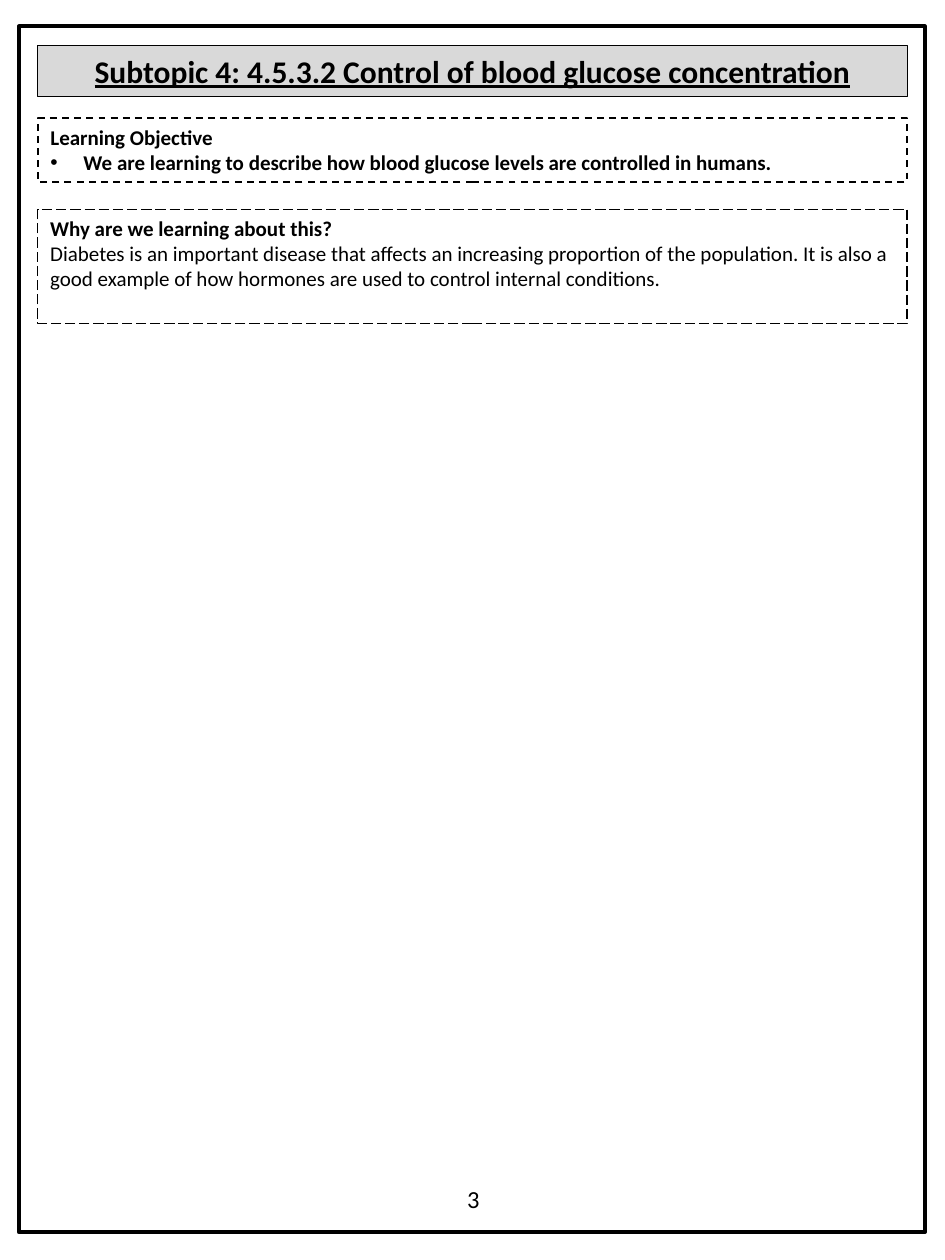
from lxml import etree
from pptx import Presentation
from pptx.dml.color import RGBColor
from pptx.enum.dml import MSO_LINE_DASH_STYLE as Dash
from pptx.enum.shapes import MSO_SHAPE as Shape
from pptx.enum.text import MSO_ANCHOR as Anchor, MSO_AUTO_SIZE as AutoSize, PP_ALIGN as Align
from pptx.oxml.ns import qn
from pptx.util import Pt

BLACK = RGBColor(0x00, 0x00, 0x00)
GREY = RGBColor(0xD9, 0xD9, 0xD9)
LEFT, WIDTH = 21.6, 496.8


def place(box, left, top, width, height, line_width=None, dash=None):
    box.left, box.top, box.width, box.height = Pt(left), Pt(top), Pt(width), Pt(height)
    box.fill.background()
    if line_width:
        box.line.color.rgb = BLACK
        box.line.width = Pt(line_width)
        box.line.dash_style = dash


def write(box, lines, size, anchor=Anchor.TOP, align=Align.LEFT):
    """Fill the box with (text, bold) paragraphs."""
    frame = box.text_frame
    frame.text = "\n".join(text for text, _ in lines)
    frame.word_wrap = True
    frame.auto_size = AutoSize.NONE
    frame.vertical_anchor = anchor
    for paragraph, (_, bold) in zip(frame.paragraphs, lines):
        paragraph.alignment = align
        paragraph.space_before = Pt(0)
        paragraph.font.name = "Calibri"
        paragraph.font.size = Pt(size)
        paragraph.font.bold = bold
        paragraph.font.color.rgb = BLACK


prs = Presentation()
prs.slide_width, prs.slide_height = Pt(540), Pt(720)
slide = prs.slides.add_slide(prs.slide_layouts[1])

title = slide.shapes.title
place(title, LEFT, 25.9, WIDTH, 29.1, 0.75)
title.fill.solid()
title.fill.fore_color.rgb = GREY
write(title, [("Subtopic 4: 4.5.3.2 Control of blood glucose concentration", True)],
      18, Anchor.TOP, Align.CENTER)
title.text_frame.paragraphs[0].font.underline = True

objective = slide.placeholders[1]
place(objective, LEFT, 67.6, WIDTH, 36.4, 1, Dash.DASH)
write(objective, [
    ("Learning Objective", True),
    ("We are learning to describe how blood glucose levels are controlled in humans.", True),
], 12)
heading, goal = [p._p.get_or_add_pPr() for p in objective.text_frame.paragraphs]
heading.set("marL", "0")
heading.set("indent", "0")
etree.SubElement(heading, qn("a:buNone"))
goal.set("marL", str(Pt(18.9)))
goal.set("indent", str(-Pt(18.9)))
bullet_font = etree.Element(qn("a:buFont"), typeface="Arial")
bullet = etree.Element(qn("a:buChar"), char="•")
goal.find(qn("a:defRPr")).addprevious(bullet_font)
bullet_font.addnext(bullet)
heading.find(qn("a:defRPr")).addprevious(heading.find(qn("a:buNone")))

reason = slide.shapes.add_shape(Shape.RECTANGLE, 0, 0, 0, 0)
reason.shadow.inherit = False
place(reason, LEFT, 119.6, WIDTH, 65.4, 0.75, Dash.LONG_DASH)
write(reason, [
    ("Why are we learning about this?", True),
    ("Diabetes is an important disease that affects an increasing proportion of the population. "
     "It is also a good example of how hormones are used to control internal conditions.", False),
], 12)

page_border = slide.shapes.add_shape(Shape.RECTANGLE, 0, 0, 0, 0)
page_border.shadow.inherit = False
place(page_border, 10.8, 15.1, 517.7, 689, 2.25)

page_number = slide.shapes.add_textbox(0, 0, 0, 0)
place(page_number, 259.9, 673.2, 38.2, 24.5)
write(page_number, [("3", False)], 14)

prs.save("out.pptx")
